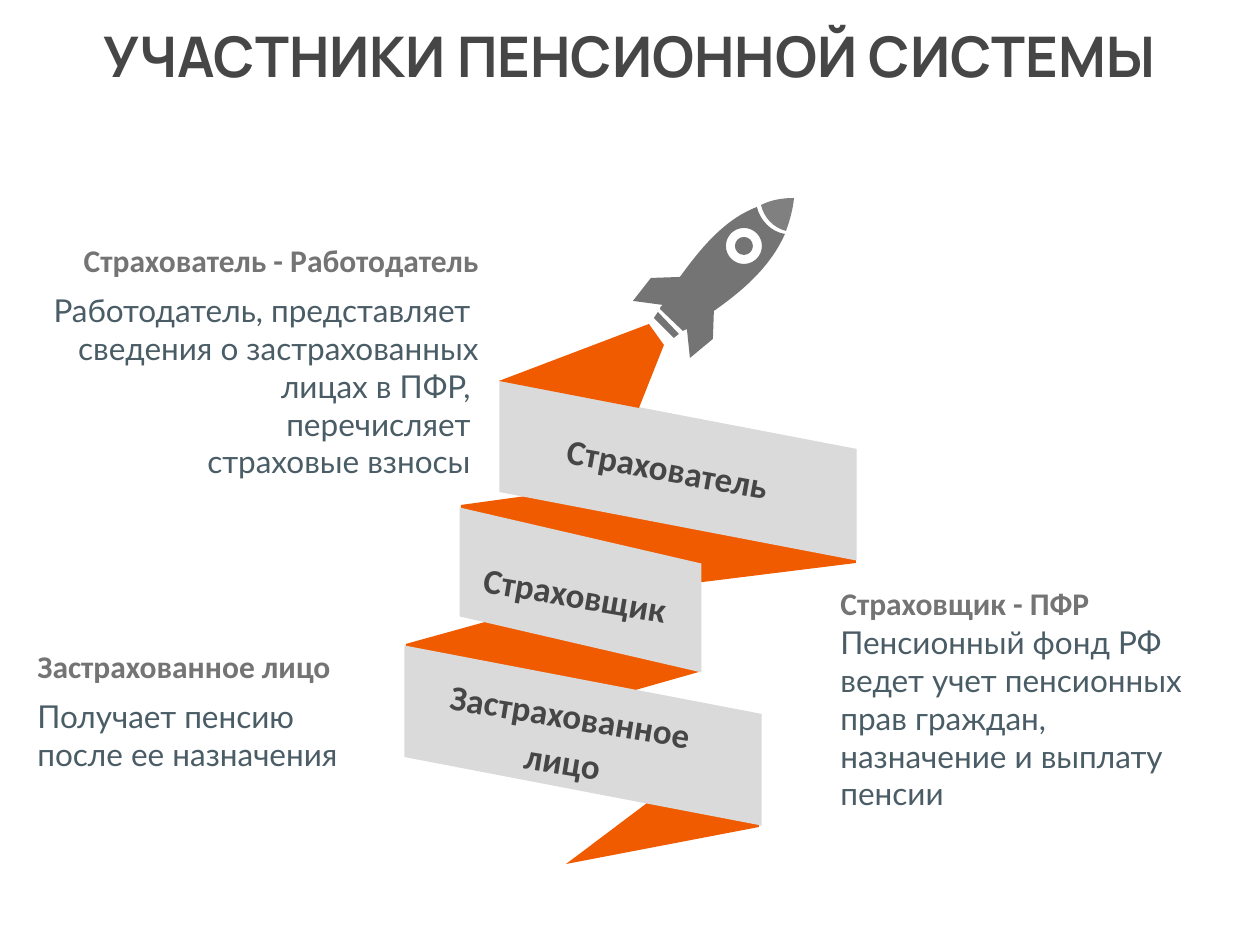
from lxml import etree
from pptx import Presentation
from pptx.dml.color import RGBColor
from pptx.enum.shapes import MSO_SHAPE
from pptx.enum.text import MSO_ANCHOR, PP_ALIGN
from pptx.oxml.ns import qn
from pptx.util import Emu, Pt

SCALE = 914400 / 126  # EMU per px
DARK = RGBColor(0x46, 0x46, 0x46)
GREY = RGBColor(0x74, 0x74, 0x74)
NOSE_GREY = RGBColor(0x80, 0x80, 0x80)
SLATE = RGBColor(0x4A, 0x5C, 0x65)
ORANGE = RGBColor(0xF0, 0x5B, 0x00)
SILVER = RGBColor(0xDA, 0xDA, 0xDA)

FOLDS = [
    [(759, 827), (566, 864), (760, 718)],
    [(698, 563), (406, 644), (407, 755), (699, 672)],
    [(461, 505), (854, 451), (856, 563), (461, 612)],
]
FLAME = [(649, 324), (499, 381), (639, 408), (664, 345)]

# Unrotated frame and slant of each ribbon band
BANDS = [
    (588, 292, 180, 357, 0.38),
    (498, 469, 165, 242, 0.34),
    (493, 557, 180, 357, 0.38),
]

# Outline steps: 2 numbers are a corner, 6 numbers are a Bezier curve
NOZZLE = [(658, 312), (679, 334), (678, 335, 676, 336, 674, 338), (654, 318)]
HULL = [
    (757, 207), (760, 220, 771, 232, 785, 234),
    (770, 268, 741, 292, 714, 311), (713, 339), (690, 358), (687, 329),
    (683, 331), (660, 309), (660, 307, 661, 306, 663, 305), (633, 301),
    (651, 278), (680, 277), (699, 251, 723, 220, 757, 207),
]
NOSE = [
    (794, 198), (793, 209, 790, 220, 786, 231),
    (774, 228, 764, 218, 761, 205), (771, 200, 782, 198, 794, 198),
]
PORTHOLE = (744, 246)

LABELS = [
    ("Застрахованное лицо", (407, 687, 320, 98), 9.4),
    ("Страховщик", (449, 543, 253, 98), 9.7),
    ("Страхователь", (529, 417, 278, 98), 10.3),
]

# Heading, its box, lines, their box, alignment
NOTES = [
    ("Страховщик - ПФР", (828, 578, 407, 50),
     ["Пенсионный фонд РФ", "ведет учет пенсионных", "прав граждан,",
      "назначение и выплату", "пенсии"],
     (828, 617, 407, 204), PP_ALIGN.LEFT),
    ("Страхователь - Работодатель", (-54, 235, 545, 113),
     ["Работодатель, представляет ", "сведения о застрахованных",
      "лицах в ПФР, ", "перечисляет ", "страховые взносы "],
     (-54, 285, 545, 204), PP_ALIGN.RIGHT),
    ("Застрахованное лицо", (25, 641, 392, 50),
     ["Получает пенсию", "после ее назначения"],
     (25, 691, 392, 89), PP_ALIGN.LEFT),
]


def px(n):
    return Emu(round(n * SCALE))


def paint(sp, color):
    sp.shadow.inherit = False
    sp.fill.solid()
    sp.fill.fore_color.rgb = color
    sp.line.fill.background()


def circle(center, r):
    """Four Bezier quarters around the center."""
    x, y = center
    k = 0.55 * r
    return [
        (x + r, y),
        (x + r, y + k, x + k, y + r, x, y + r),
        (x - k, y + r, x - r, y + k, x - r, y),
        (x - r, y - k, x - k, y - r, x, y - r),
        (x + k, y - r, x + r, y - k, x + r, y),
    ]


def bend(sp, line, step):
    """Turn a straight path segment into a Bezier curve."""
    curve = etree.Element(qn("a:cubicBezTo"))
    for x, y in zip(step[::2], step[1::2]):
        etree.SubElement(curve, qn("a:pt"),
                         x=str(px(x) - sp.left), y=str(px(y) - sp.top))
    line.getparent().replace(line, curve)


def add_outline(slide, contours, color):
    """Draw one freeform; inner contours become holes."""
    builder = None
    for contour in contours:
        start, *rest = [(px(step[-2]), px(step[-1])) for step in contour]
        if builder is None:
            builder = slide.shapes.build_freeform(*start)
        else:
            builder.move_to(*start)
        builder.add_line_segments(rest, close=True)
    sp = builder.convert_to_shape()
    steps = [step for contour in contours for step in contour[1:]]
    lines = list(sp.element.iter(qn("a:lnTo")))
    for line, step in zip(lines, steps):
        if len(step) == 6:
            bend(sp, line, step)
    paint(sp, color)


def add_band(slide, x, y, w, h, slant):
    sp = slide.shapes.add_shape(MSO_SHAPE.PARALLELOGRAM, px(x), px(y), px(w), px(h))
    sp.adjustments[0] = slant
    sp.rotation = 90
    paint(sp, SILVER)


def add_text(slide, box, lines, font, size, color, bold=False,
             align=PP_ALIGN.LEFT, spacing=1.0, anchor=MSO_ANCHOR.TOP, rotation=0):
    sp = slide.shapes.add_textbox(*map(px, box))
    sp.rotation = rotation
    tf = sp.text_frame
    tf.word_wrap = True
    tf.vertical_anchor = anchor
    tf.text = "\n".join(lines)
    for p in tf.paragraphs:
        p.alignment = align
        p.line_spacing = spacing
        p.font.name = font
        p.font.size = Pt(size)
        p.font.bold = bold
        p.font.color.rgb = color


def add_rocket(slide):
    add_outline(slide, [NOZZLE, circle(PORTHOLE, 9), circle(PORTHOLE, 18), HULL], GREY)
    add_outline(slide, [NOSE], NOSE_GREY)


def add_ribbon(slide):
    for fold in FOLDS:
        add_outline(slide, [fold], ORANGE)
    for band in BANDS:
        add_band(slide, *band)
    add_outline(slide, [FLAME], ORANGE)


def main():
    prs = Presentation()
    prs.slide_width, prs.slide_height = px(1260), px(945)
    slide = prs.slides.add_slide(prs.slide_layouts[6])

    add_text(slide, (0, 23, 1260, 106), ["УЧАСТНИКИ ПЕНСИОННОЙ СИСТЕМЫ"],
             "Manrope", 32, DARK, bold=True, align=PP_ALIGN.CENTER, spacing=0.9)
    add_rocket(slide)
    add_ribbon(slide)
    for heading, heading_box, lines, lines_box, align in NOTES:
        add_text(slide, lines_box, lines, "Lato", 18, SLATE, align=align)
        add_text(slide, heading_box, [heading], "Calibri", 18, GREY, bold=True, align=align)
    for label, box, rotation in LABELS:
        add_text(slide, box, [label], "Calibri", 20, DARK, bold=True,
                 align=PP_ALIGN.CENTER, spacing=1.1, anchor=MSO_ANCHOR.MIDDLE,
                 rotation=rotation)

    prs.save("out.pptx")


if __name__ == "__main__":
    main()
